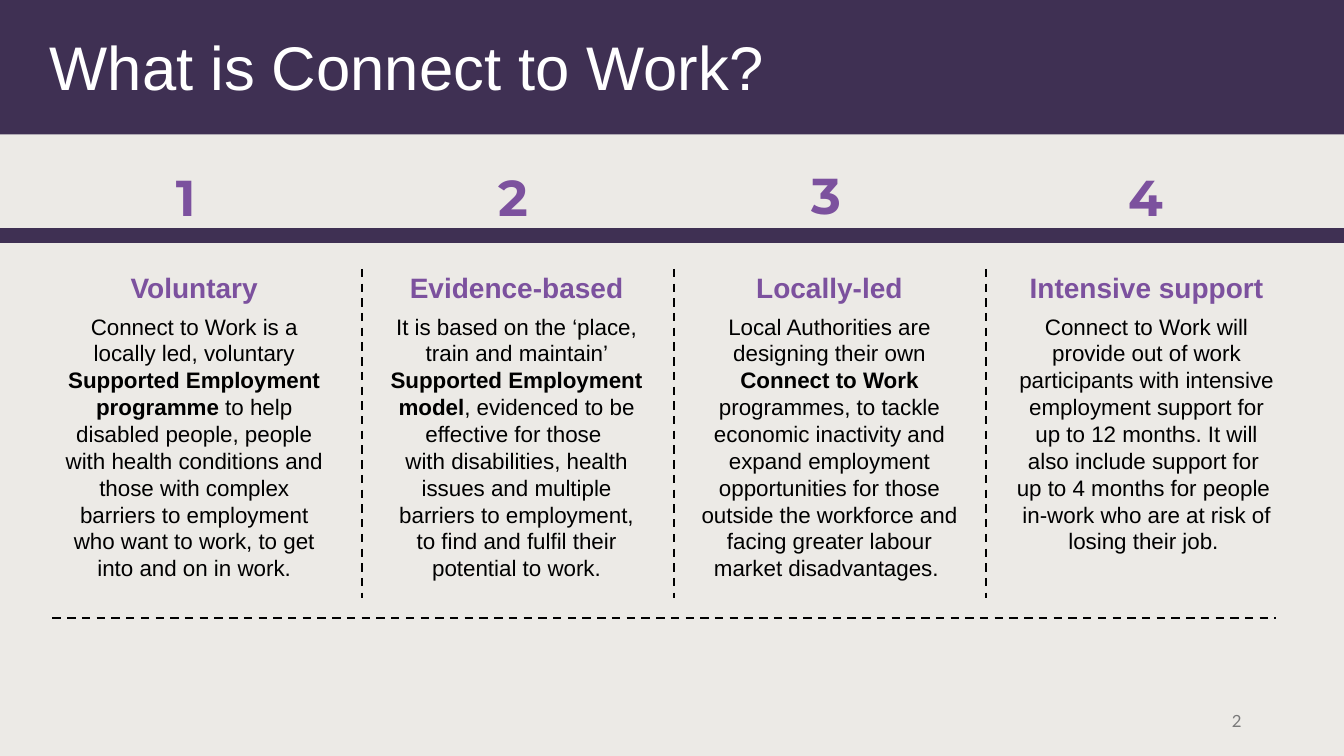
from lxml import etree
from pptx import Presentation
from pptx import util as u
from pptx.dml.color import RGBColor
from pptx.enum import dml, shapes, text
from pptx.oxml.ns import qn

PX = 9525
WIDTH, HEIGHT = 1280, 720
PURPLE, VIOLET, SAND = "3F3053", "7C519E", "A29782"
BLACK, WHITE, GREY = "000000", "FFFFFF", "797979"
COLUMN_LEFTS = (50, 357, 655, 957)
COLUMN_WIDTH = 270
NUMBER_OFFSET = 108

# Each column: heading, then (wording, bold) runs
COLUMNS = [
    ("Voluntary", [
        ("Connect to Work is a locally led, voluntary ", False),
        ("Supported Employment programme ", True),
        ("to help disabled people, people with health conditions and those "
         "with complex barriers to employment who want to work, to get into "
         "and on in work.", False)]),
    ("Evidence-based", [
        ("It is based on the ‘place, train and maintain’ ", False),
        ("Supported Employment model", True),
        (", evidenced to be effective for those \nwith disabilities, health "
         "issues and multiple barriers to employment,\n"
         "to find and fulfil their potential to work.", False)]),
    ("Locally-led", [
        ("Local Authorities are designing their own ", False),
        ("Connect to Work ", True),
        ("programmes, to tackle economic inactivity and expand employment "
         "opportunities for those outside the workforce and facing greater "
         "labour market disadvantages. ", False)]),
    ("Intensive support", [
        ("Connect to Work will provide out of work participants with "
         "intensive employment support for up to 12 months. It will also "
         "include support for \nup to 4 months for people \n"
         "in-work who are at risk of losing their job. ", False)]),
]


def px(length):
    return u.Emu(length * PX)


def rgb(hex_color):
    return RGBColor.from_string(hex_color)


def add_band(slide, height, color, opacity=100):
    """Full-width rectangle from the top edge; opacity in percent."""
    band = slide.shapes.add_shape(
        shapes.MSO_SHAPE.RECTANGLE, 0, 0, px(WIDTH), px(height))
    band.shadow.inherit = False
    band.fill.solid()
    band.fill.fore_color.rgb = rgb(color)
    band.line.fill.background()
    if opacity < 100:
        tint = band.fill._xPr.find(qn("a:solidFill"))[0]
        etree.SubElement(tint, qn("a:alpha")).set("val", str(opacity * 1000))


def add_rule(slide, start, end, color=BLACK, weight=1.5, dashed=True):
    rule = slide.shapes.add_connector(
        shapes.MSO_CONNECTOR.STRAIGHT, *map(px, start + end))
    rule.line.color.rgb = rgb(color)
    rule.line.width = u.Pt(weight)
    if dashed:
        rule.line.dash_style = dml.MSO_LINE.DASH
    etree.SubElement(rule._element.spPr, qn("a:effectLst"))


def add_text_frame(slide, left, top, width, height, wrap=True,
                   anchor=text.MSO_ANCHOR.TOP):
    frame = slide.shapes.add_textbox(*map(px, (left, top, width, height))).text_frame
    frame.word_wrap = wrap
    frame.vertical_anchor = anchor
    return frame


def add_run(paragraph, wording, size, color, font="Arial", bold=False):
    """Add wording in one style, with a line break at each newline."""
    for index, line in enumerate(wording.split("\n")):
        if index:
            paragraph.add_line_break()
        run = paragraph.add_run()
        run.text = line
        run.font.name = font
        run.font.size = u.Pt(size)
        run.font.bold = bold
        run.font.color.rgb = rgb(color)


def add_column(slide, left, heading, body):
    frame = add_text_frame(slide, left, 253, COLUMN_WIDTH, 346)
    title, description = frame.paragraphs[0], frame.add_paragraph()
    for paragraph in (title, description):
        paragraph.alignment = text.PP_ALIGN.CENTER
        paragraph.space_after = u.Pt(6)
    add_run(title, heading, 20, VIOLET, bold=True)
    for wording, bold in body:
        add_run(description, wording, 16, BLACK, bold=bold)


def add_number(slide, left, top, number):
    frame = add_text_frame(slide, left, top, 52, 68, wrap=False)
    add_run(frame.paragraphs[0], str(number), 36, VIOLET, "Montserrat", True)


def main():
    deck = Presentation()
    deck.slide_width, deck.slide_height = px(WIDTH), px(HEIGHT)
    slide = deck.slides.add_slide(deck.slide_layouts[6])

    add_band(slide, HEIGHT, SAND, opacity=20)
    add_band(slide, 128, PURPLE)
    title = add_text_frame(slide, 38, -5, 1104, 145, anchor=text.MSO_ANCHOR.MIDDLE)
    title.paragraphs[0].line_spacing = 0.9
    add_run(title.paragraphs[0], "What is Connect to Work?", 44, WHITE)

    page = add_text_frame(slide, 904, 667, 288, 38, anchor=text.MSO_ANCHOR.MIDDLE)
    page.paragraphs[0].alignment = text.PP_ALIGN.RIGHT
    add_run(page.paragraphs[0], "2", 12, GREY, "Lato")

    add_rule(slide, (0, 224), (WIDTH, 224), PURPLE, 10.5, dashed=False)
    add_rule(slide, (50, 589), (1215, 589))
    for divider in range(3):
        x = 345 + 297 * divider
        add_rule(slide, (x, 256), (x, 570))

    for number, (left, column) in enumerate(zip(COLUMN_LEFTS, COLUMNS), 1):
        add_column(slide, left, *column)
        add_number(slide, left + NUMBER_OFFSET, 152 if number == 3 else 153, number)

    deck.save("out.pptx")


if __name__ == "__main__":
    main()
